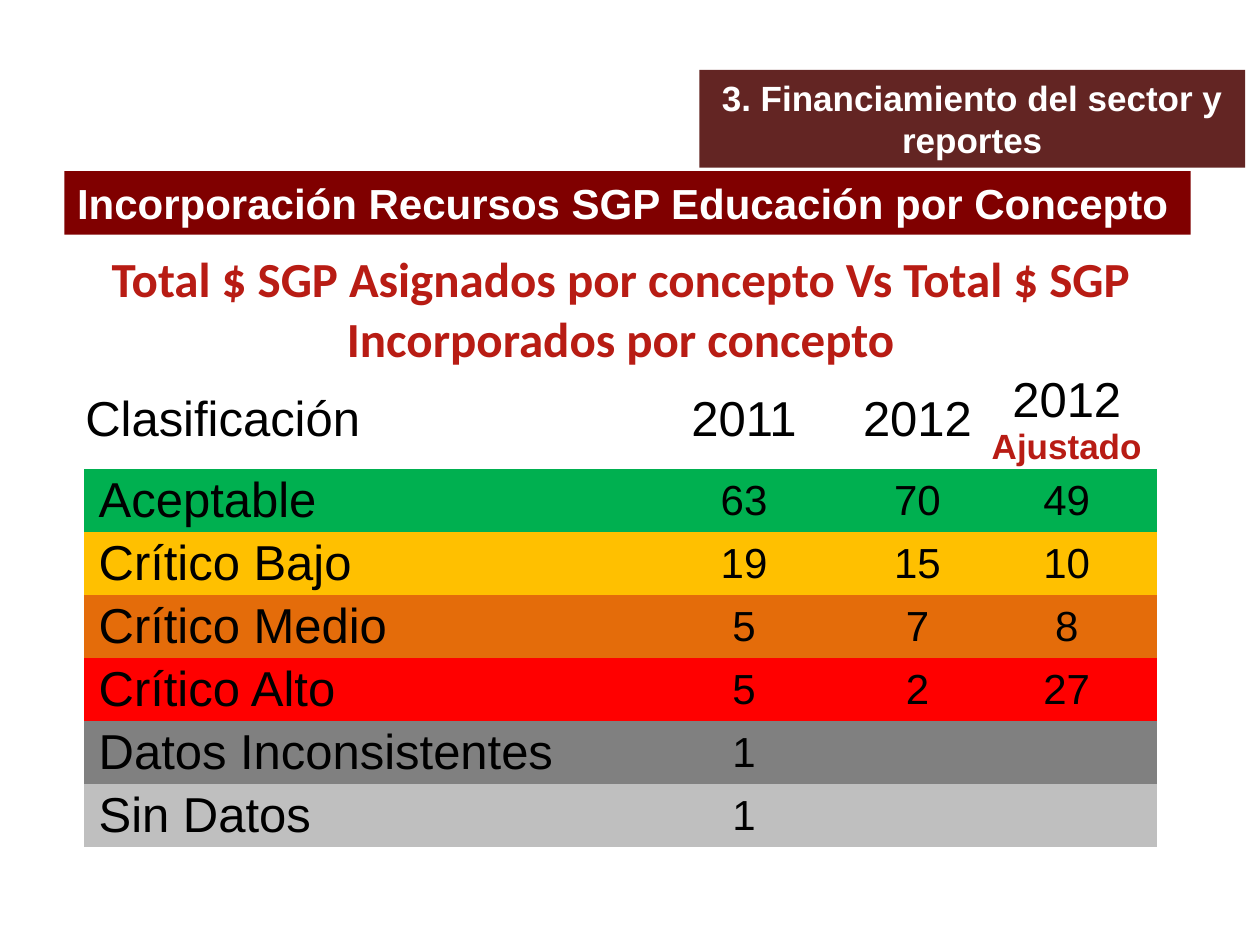
from dataclasses import dataclass

from pptx import Presentation
from pptx.dml.color import RGBColor
from pptx.enum import shapes, text
from pptx.util import Cm, Pt

WHITE = RGBColor(0xFF, 0xFF, 0xFF)
BLACK = RGBColor(0, 0, 0)
RED = RGBColor(0xB8, 0x1C, 0x14)
MAROON = RGBColor(0x80, 0, 0)
DARK_MAROON = RGBColor(0x63, 0x25, 0x23)

CENTER = text.PP_ALIGN.CENTER
LEFT = text.PP_ALIGN.LEFT
MIDDLE = text.MSO_ANCHOR.MIDDLE
BOTTOM = text.MSO_ANCHOR.BOTTOM
NO_GRID_STYLE = "{2D5ABB26-0587-4C30-8999-92F81FD0307C}"

COLUMN_WIDTHS = (11, 4.6, 2.39, 3.63)
HEADING_HEIGHT, HEADER_HEIGHT, ROW_HEIGHT = 2.31, 1.98, 1.27
HEADERS = ("Clasificación", "2011", "2012", "2012")


@dataclass
class Rating:
    name: str
    color: RGBColor
    counts: tuple[str, str, str]


RATINGS = (
    Rating("Aceptable", RGBColor(0, 0xB0, 0x50), ("63", "70", "49")),
    Rating("Crítico Bajo", RGBColor(0xFF, 0xC0, 0), ("19", "15", "10")),
    Rating("Crítico Medio", RGBColor(0xE4, 0x6C, 0x0A), ("5", "7", "8")),
    Rating("Crítico Alto", RGBColor(0xFF, 0, 0), ("5", "2", "27")),
    Rating("Datos Inconsistentes", RGBColor(0x80, 0x80, 0x80), ("1", "", "")),
    Rating("Sin Datos", RGBColor(0xBF, 0xBF, 0xBF), ("1", "", "")),
)


def write(paragraph, words: str, *, size: float, color: RGBColor = BLACK,
          bold: bool = False, font: str = "Arial", align=CENTER) -> None:
    paragraph.alignment = align
    run = paragraph.add_run()
    run.text = words
    run.font.name = font
    run.font.size = Pt(size)
    run.font.bold = bold
    run.font.color.rgb = color


def format_banner(shape, left: float, top: float, width: float, height: float,
                  fill: RGBColor, words: str, *, size: float, align, wrap: bool) -> None:
    """Place a solid box of fixed size and write its bold white text."""
    shape.left, shape.top = Cm(left), Cm(top)
    shape.width, shape.height = Cm(width), Cm(height)
    shape.fill.solid()
    shape.fill.fore_color.rgb = fill
    shape.line.fill.background()
    frame = shape.text_frame
    frame.word_wrap = wrap
    frame.auto_size = text.MSO_AUTO_SIZE.NONE
    frame.vertical_anchor = text.MSO_ANCHOR.TOP
    write(frame.paragraphs[0], words, size=size, color=WHITE, bold=True, align=align)


def fill_cell(cell, words: str, *, fill: RGBColor | None = None, anchor=MIDDLE,
              indent: float = 0.02, **text_format) -> None:
    cell.margin_left = Cm(indent)
    cell.margin_right = cell.margin_top = Cm(0.02)
    cell.margin_bottom = 0
    cell.vertical_anchor = anchor
    if fill is None:
        cell.fill.background()
    else:
        cell.fill.solid()
        cell.fill.fore_color.rgb = fill
    if words:
        write(cell.text_frame.paragraphs[0], words, **text_format)


def add_ratings_table(slide) -> None:
    heights = [HEADING_HEIGHT, HEADER_HEIGHT] + [ROW_HEIGHT] * len(RATINGS)
    frame = slide.shapes.add_table(len(heights), len(COLUMN_WIDTHS), Cm(1.7), Cm(5.03),
                                   Cm(sum(COLUMN_WIDTHS)), Cm(sum(heights)))
    table = frame.table
    table.first_row = table.horz_banding = False
    table._tbl.tblPr[0].text = NO_GRID_STYLE
    for column, width in zip(table.columns, COLUMN_WIDTHS):
        column.width = Cm(width)
    for row, height in zip(table.rows, heights):
        row.height = Cm(height)

    heading = table.cell(0, 0)
    heading.merge(table.cell(0, len(COLUMN_WIDTHS) - 1))
    fill_cell(heading, "Total $ SGP Asignados por concepto Vs Total $ SGP "
              "Incorporados por concepto", anchor=BOTTOM, size=28, color=RED,
              bold=True, font="Calibri")

    for index, header in enumerate(HEADERS):
        fill_cell(table.cell(1, index), header, size=28,
                  align=CENTER if index else LEFT)
    adjusted = table.cell(1, len(HEADERS) - 1).text_frame.add_paragraph()
    write(adjusted, "Ajustado", size=20, color=RED, bold=True)

    for row, rating in enumerate(RATINGS, start=2):
        fill_cell(table.cell(row, 0), rating.name, fill=rating.color,
                  indent=0.29, size=28, align=LEFT)
        for column, count in enumerate(rating.counts, start=1):
            fill_cell(table.cell(row, column), count, fill=rating.color, size=24)


def main() -> None:
    presentation = Presentation()
    presentation.slide_width, presentation.slide_height = Cm(25.4), Cm(19.05)
    slide = presentation.slides.add_slide(presentation.slide_layouts[5])
    add_ratings_table(slide)
    format_banner(slide.shapes.title, 1.3, 3.45, 22.7, 1.28, MAROON,
                  "Incorporación Recursos SGP Educación por Concepto",
                  size=24, align=LEFT, wrap=False)
    section = slide.shapes.add_shape(shapes.MSO_SHAPE.RECTANGLE, 0, 0, 0, 0)
    section.shadow.inherit = False
    format_banner(section, 14.1, 1.41, 11, 1.97, DARK_MAROON,
                  "3. Financiamiento del sector y reportes",
                  size=20, align=CENTER, wrap=True)
    presentation.save("out.pptx")


if __name__ == "__main__":
    main()
